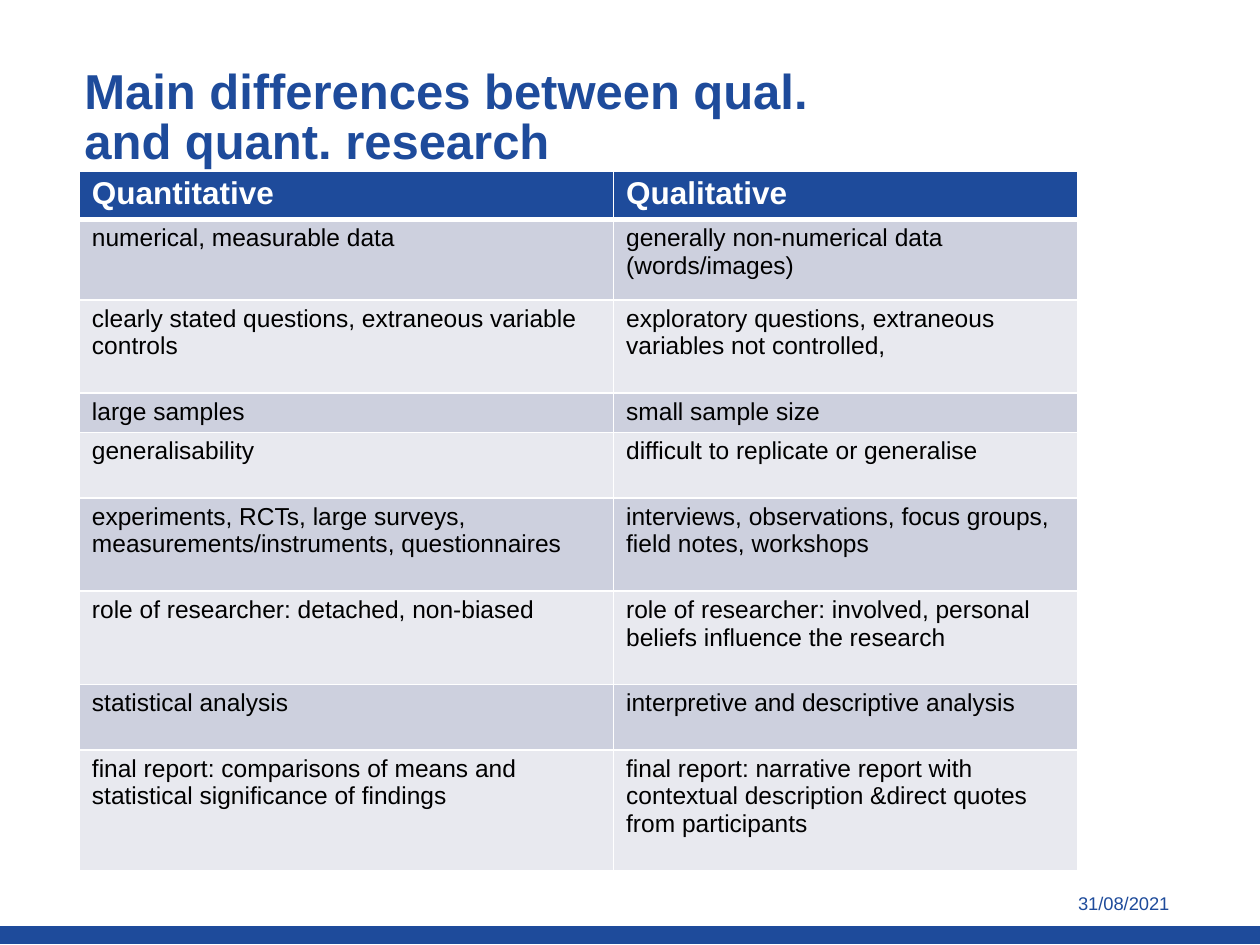
from dataclasses import dataclass

from lxml.etree import SubElement
from pptx import Presentation
from pptx.dml.color import RGBColor as RGB
from pptx.enum.shapes import MSO_SHAPE as Shape
from pptx.enum.text import MSO_ANCHOR as Anchor, MSO_AUTO_SIZE as AutoSize, PP_ALIGN as Align
from pptx.oxml.ns import qn
from pptx.util import Inches, Pt


@dataclass(frozen=True)
class Theme:
    font: str = "Arial"
    blue: str = "1E4B9B"
    white: str = "FFFFFF"
    black: str = "000000"
    bands: tuple = ("CDD0DE", "E8E9EF")
    title_size: float = 28
    header_size: float = 18
    body_size: float = 14
    date_size: float = 10.5
    rule: float = 1
    header_rule: float = 3


THEME = Theme()

COLUMN_WIDTHS = (4.24, 3.68)
ROW_HEIGHTS = (0.36, 0.64, 0.74, 0.31, 0.52, 0.74, 0.74, 0.52, 0.96)
COMPARISON = [
    ("Quantitative", "Qualitative"),
    ("numerical, measurable data", "generally non-numerical data (words/images)"),
    ("clearly stated questions, extraneous variable controls",
     "exploratory questions, extraneous variables not controlled,"),
    ("large samples", "small sample size"),
    ("generalisability", "difficult to replicate or generalise"),
    ("experiments, RCTs, large surveys, measurements/instruments, questionnaires",
     "interviews, observations, focus groups, field notes, workshops"),
    ("role of researcher: detached, non-biased",
     "role of researcher: involved, personal beliefs influence the research"),
    ("statistical analysis", "interpretive and descriptive analysis"),
    ("final report: comparisons of means and statistical significance of findings",
     "final report: narrative report with contextual description &direct quotes from participants"),
]


def write(frame, text, *, size, color, bold=False, align=Align.LEFT,
          anchor=Anchor.TOP, spacing=None):
    frame.word_wrap = True
    frame.vertical_anchor = anchor
    paragraph = frame.paragraphs[0]
    paragraph.alignment = align
    paragraph.space_before = Pt(0)
    if spacing:
        paragraph.line_spacing = spacing
    run = paragraph.add_run()
    run.text = text
    run.font.name = THEME.font
    run.font.size = Pt(size)
    run.font.bold = bold
    run.font.color.rgb = RGB.from_string(color)


def set_margins(target, left, top, right, bottom):
    target.margin_left, target.margin_top = Inches(left), Inches(top)
    target.margin_right, target.margin_bottom = Inches(right), Inches(bottom)


def add_borders(cell, **widths):
    """Draw white cell borders; widths in points are keyed L, R, T and B."""
    properties = cell._tc.get_or_add_tcPr()
    for position, side in enumerate("LRTB"):
        line = SubElement(properties, qn(f"a:ln{side}"),
                          w=str(Pt(widths.get(side, THEME.rule))))
        fill = SubElement(line, qn("a:solidFill"))
        SubElement(fill, qn("a:srgbClr"), val=THEME.white)
        properties.remove(line)
        properties.insert(position, line)


def add_title(slide, left, top, width, height):
    title = slide.shapes.title
    title.left, title.top = Inches(left), Inches(top)
    title.width, title.height = Inches(width), Inches(height)
    frame = title.text_frame
    frame.auto_size = AutoSize.NONE
    set_margins(frame, 0.04, 0.04, 0.02, 0.04)
    write(frame, "Main differences between qual. and quant. research",
          size=THEME.title_size, color=THEME.blue, bold=True, spacing=0.85)


def add_comparison(slide, left, top):
    table = slide.shapes.add_table(
        len(COMPARISON), len(COLUMN_WIDTHS), Inches(left), Inches(top),
        Inches(sum(COLUMN_WIDTHS)), Inches(sum(ROW_HEIGHTS))).table
    table.horz_banding = False
    for column, width in zip(table.columns, COLUMN_WIDTHS):
        column.width = Inches(width)
    for index, (row, height, texts) in enumerate(zip(table.rows, ROW_HEIGHTS, COMPARISON)):
        row.height = Inches(height)
        header = index == 0
        for cell, text in zip(row.cells, texts):
            set_margins(cell, 0.1, 0.04, 0.1, 0.04)
            write(cell.text_frame, text, bold=header,
                  size=THEME.header_size if header else THEME.body_size,
                  color=THEME.white if header else THEME.black)
            cell.fill.solid()
            cell.fill.fore_color.rgb = RGB.from_string(
                THEME.blue if header else THEME.bands[(index - 1) % 2])
            add_borders(cell, T=THEME.header_rule if index == 1 else THEME.rule,
                        B=THEME.header_rule if header else THEME.rule)


def add_footer(slide, left, top, width, height):
    """Place the coloured bar in the box and the date just above its right end."""
    bar = slide.shapes.add_shape(Shape.RECTANGLE, Inches(left), Inches(top),
                                 Inches(width), Inches(height))
    bar.shadow.inherit = False
    bar.fill.solid()
    bar.fill.fore_color.rgb = bar.line.color.rgb = RGB.from_string(THEME.blue)
    bar.line.width = Pt(THEME.rule)
    date = slide.shapes.add_textbox(Inches(left + width - 1.7), Inches(top - 0.33),
                                    Inches(1.08), Inches(0.28))
    date.text_frame.auto_size = AutoSize.SHAPE_TO_FIT_TEXT
    write(date.text_frame, "31/08/2021", size=THEME.date_size,
          color=THEME.blue, align=Align.RIGHT)


def main():
    deck = Presentation()
    deck.slide_width, deck.slide_height = Inches(10), Inches(7.5)
    slide = deck.slides.add_slide(deck.slide_layouts.get_by_name("Title Only"))
    add_footer(slide, 0, 7.36, 10, 0.13)
    add_title(slide, 0.63, 0.51, 6.52, 0.96)
    add_comparison(slide, 0.63, 1.36)
    deck.save("out.pptx")


if __name__ == "__main__":
    main()
